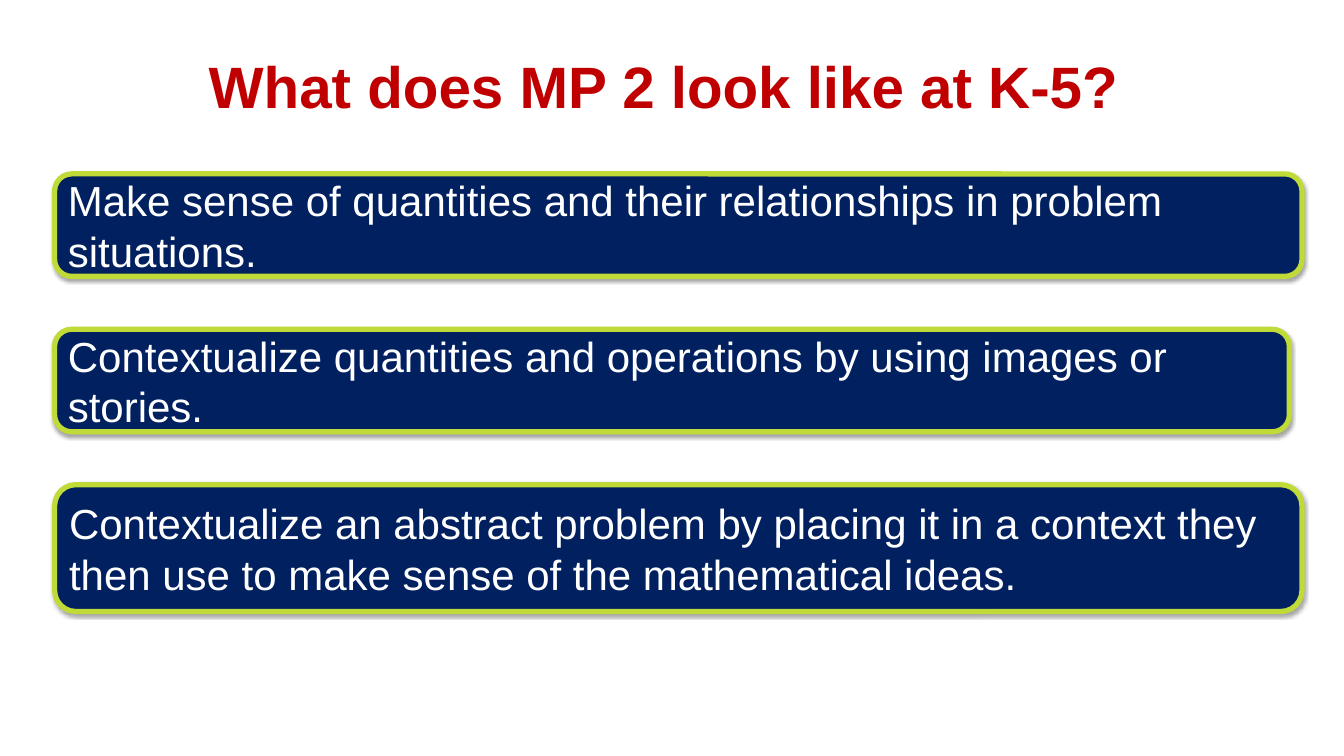
import pptx
import pptx.util
import pptx.dml.color
import pptx.enum.text
import pptx.enum.shapes
import pptx.oxml
import pptx.oxml.ns

Inch, Pt = pptx.util.Inches, pptx.util.Pt
Color = pptx.dml.color.RGBColor.from_string
Align = pptx.enum.text.PP_ALIGN
Anchor = pptx.enum.text.MSO_ANCHOR
Kind = pptx.enum.shapes.MSO_SHAPE

theme = {
    "page": "FFFFFF", "fill": "002060", "edge": "C0DB37", "shade": "000000",
    "weight": Pt(4.5),
    "head": {"name": "Arial", "size": Pt(50), "bold": True, "color": "C00000"},
    "body": {"name": "Arial", "size": Pt(36), "bold": False, "color": "FFFFFF"},
}


def write(frame, text, look, align):
    par = frame.paragraphs[0]
    par.alignment = align
    run = par.add_run()
    run.text = text
    for key, value in look.items():
        if key == "color":
            run.font.color.rgb = Color(value)
        else:
            setattr(run.font, key, value)


def place(shape, left, top, width, height):
    spots = {"left": left, "top": top, "width": width, "height": height}
    for key, value in spots.items():
        setattr(shape, key, Inch(value))


deck = pptx.Presentation()
deck.slide_width, deck.slide_height = Inch(16), Inch(9)
slide = deck.slides.add_slide(deck.slide_layouts[5])
slide.background.fill.solid()
slide.background.fill.fore_color.rgb = Color(theme["page"])

title = slide.shapes.title
place(title, 0.8, 0.6, 14.4, 0.84)
frame = title.text_frame
style = {"margin_left": 0, "margin_top": 0, "margin_right": 0, "margin_bottom": 0,
         "word_wrap": True, "vertical_anchor": Anchor.TOP,
         "auto_size": pptx.enum.text.MSO_AUTO_SIZE.NONE}
for key, value in style.items():
    setattr(frame, key, value)
write(frame, "What does MP 2 look like at K-5? ", theme["head"], Align.CENTER)

left, first, pitch = 0.65, 2.07, 1.85
cards = [
    ("Make sense of quantities and their relationships in problem situations.", 14.85, 1.22),
    ("Contextualize quantities and operations by using images or stories.", 14.7, 1.22),
    ("Contextualize an abstract problem by placing it in a context they then use "
     "to make sense of the mathematical ideas.", 14.85, 1.51),
]
shadow = (
    f'<a:effectLst {pptx.oxml.ns.nsdecls("a")}>'
    f'<a:outerShdw blurRad="{Pt(3.1)}" dist="{Pt(1.8)}" dir="5400000" rotWithShape="0">'
    f'<a:srgbClr val="{theme["shade"]}"><a:alpha val="35000"/></a:srgbClr>'
    '</a:outerShdw></a:effectLst>'
)

for row, (text, width, height) in enumerate(cards):
    card = slide.shapes.add_shape(Kind.ROUNDED_RECTANGLE, 0, 0, 0, 0)
    place(card, left, first + row * pitch, width, height)
    card.fill.solid()
    card.fill.fore_color.rgb = Color(theme["fill"])
    card.line.color.rgb = Color(theme["edge"])
    card.line.width = theme["weight"]
    card.element.spPr.append(pptx.oxml.parse_xml(shadow))
    card.text_frame.word_wrap = True
    card.text_frame.vertical_anchor = Anchor.MIDDLE
    write(card.text_frame, text, theme["body"], Align.LEFT)

deck.save("out.pptx")
